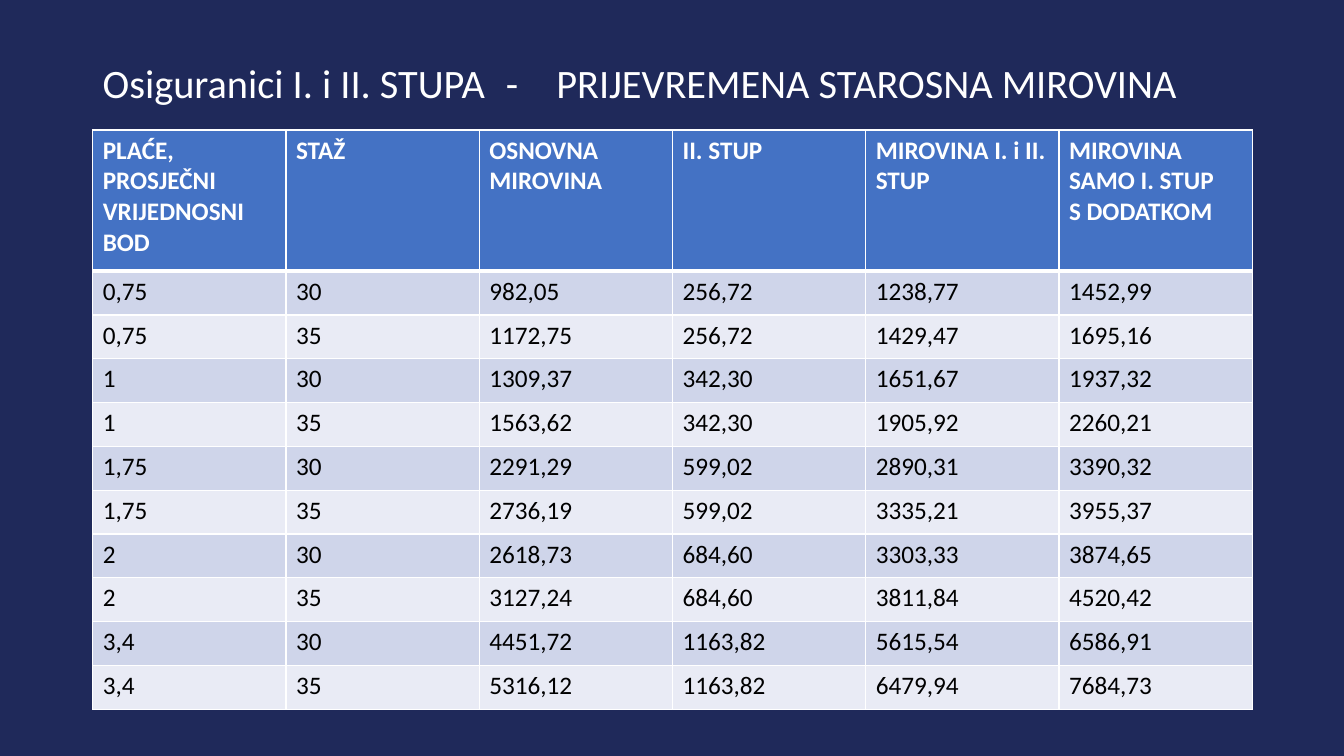
from lxml import etree
from pptx import Presentation
from pptx.dml.color import RGBColor
from pptx.enum.text import MSO_ANCHOR
from pptx.oxml.ns import qn
from pptx.util import Inches, Pt

MIDDLE = MSO_ANCHOR.MIDDLE
FONT = "Calibri"
COLORS = {
    "background": "1F295A",
    "white": "FFFFFF",
    "black": "000000",
    "header": "4472C4",
    "odd_row": "CFD5EA",
    "even_row": "E9EBF5",
}
TITLE = "Osiguranici I. i II. STUPA\t-\tPRIJEVREMENA STAROSNA MIROVINA"
TITLE_TABS = (3.06, 3.54)
HEADINGS = (
    "PLAĆE, PROSJEČNI VRIJEDNOSNI BOD",
    "STAŽ",
    "OSNOVNA MIROVINA",
    "II. STUP",
    "MIROVINA I. i II. STUP",
    "MIROVINA SAMO I. STUP\vS DODATKOM",
)
PENSIONS = (
    ("0,75", "30", "982,05", "256,72", "1238,77", "1452,99"),
    ("0,75", "35", "1172,75", "256,72", "1429,47", "1695,16"),
    ("1", "30", "1309,37", "342,30", "1651,67", "1937,32"),
    ("1", "35", "1563,62", "342,30", "1905,92", "2260,21"),
    ("1,75", "30", "2291,29", "599,02", "2890,31", "3390,32"),
    ("1,75", "35", "2736,19", "599,02", "3335,21", "3955,37"),
    ("2", "30", "2618,73", "684,60", "3303,33", "3874,65"),
    ("2", "35", "3127,24", "684,60", "3811,84", "4520,42"),
    ("3,4", "30", "4451,72", "1163,82", "5615,54", "6586,91"),
    ("3,4", "35", "5316,12", "1163,82", "6479,94", "7684,73"),
)


def rgb(name):
    """Return the named colour."""
    return RGBColor.from_string(COLORS[name])


def style_paragraph(paragraph, size, color, bold=False):
    """Set the font of a whole paragraph."""
    font = paragraph.font
    font.name, font.size, font.bold = FONT, Pt(size), bold
    font.color.rgb = rgb(color)


def add_title(slide, left, top, width, height):
    """Place the title, its parts spaced by tab stops."""
    title = slide.shapes.add_textbox(
        Inches(left), Inches(top), Inches(width), Inches(height)
    )
    frame = title.text_frame
    frame.word_wrap = True
    frame.vertical_anchor = MIDDLE
    paragraph = frame.paragraphs[0]
    paragraph.add_run().text = TITLE
    paragraph.line_spacing = 0.9
    tabs = etree.SubElement(paragraph._p.get_or_add_pPr(), qn("a:tabLst"))
    for position in TITLE_TABS:
        etree.SubElement(tabs, qn("a:tab"), pos=str(Inches(position)), algn="l")
    style_paragraph(paragraph, 28.8, "white")


def set_borders(cell, bottom_width):
    """Draw white borders around a cell."""
    properties = cell._tc.get_or_add_tcPr()
    widths = {"lnL": 1, "lnR": 1, "lnT": 1, "lnB": bottom_width}
    for index, (side, width) in enumerate(widths.items()):
        line = etree.Element(qn(f"a:{side}"), w=str(Pt(width)))
        fill = etree.SubElement(line, qn("a:solidFill"))
        etree.SubElement(fill, qn("a:srgbClr"), val=COLORS["white"])
        properties.insert(index, line)


def fill_row(cells, texts, fill, color, is_header):
    """Write and style one table row."""
    for cell, text in zip(cells, texts):
        cell.text = text
        cell.fill.solid()
        cell.fill.fore_color.rgb = rgb(fill)
        style_paragraph(cell.text_frame.paragraphs[0], 18, color, is_header)
        set_borders(cell, 3 if is_header else 1)


def add_pension_table(slide, left, top, width, height, header_height=1.4):
    """Place the pension table with a header and banded rows."""
    table = slide.shapes.add_table(
        len(PENSIONS) + 1, len(HEADINGS),
        Inches(left), Inches(top), Inches(width), Inches(height),
    ).table
    for column in table.columns:
        column.width = Inches(width / len(HEADINGS))
    header, *body = table.rows
    header.height = Inches(header_height)
    fill_row(header.cells, HEADINGS, "header", "white", True)
    for index, (row, values) in enumerate(zip(body, PENSIONS)):
        row.height = Inches((height - header_height) / len(PENSIONS))
        band = "even_row" if index % 2 else "odd_row"
        fill_row(row.cells, values, band, "black", False)


def main():
    """Build and save the slide."""
    presentation = Presentation()
    presentation.slide_width = Inches(13.33)
    presentation.slide_height = Inches(7.5)
    slide = presentation.slides.add_slide(presentation.slide_layouts[6])
    slide.background.fill.solid()
    slide.background.fill.fore_color.rgb = rgb("background")
    add_title(slide, 0.92, 0.4, 11.5, 0.89)
    add_pension_table(slide, 0.92, 1.29, 11.5, 5.75)
    presentation.save("out.pptx")


if __name__ == "__main__":
    main()
